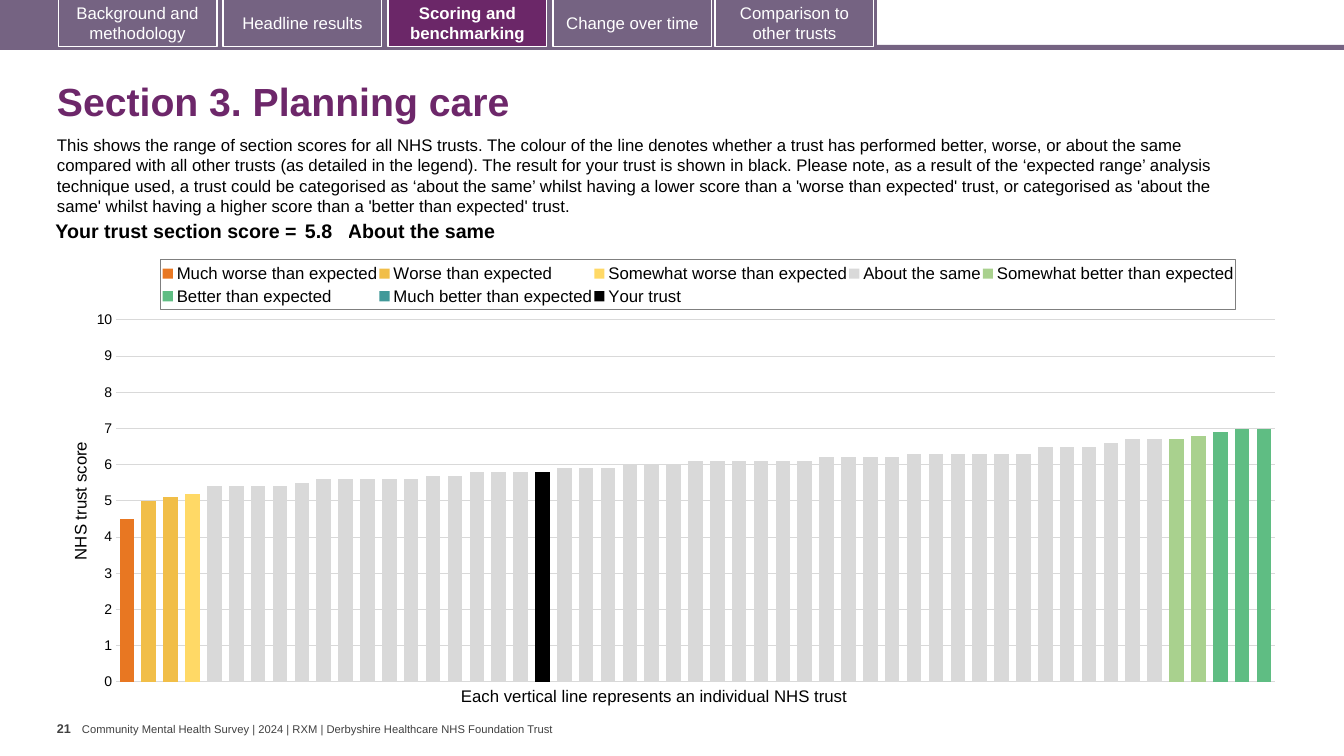
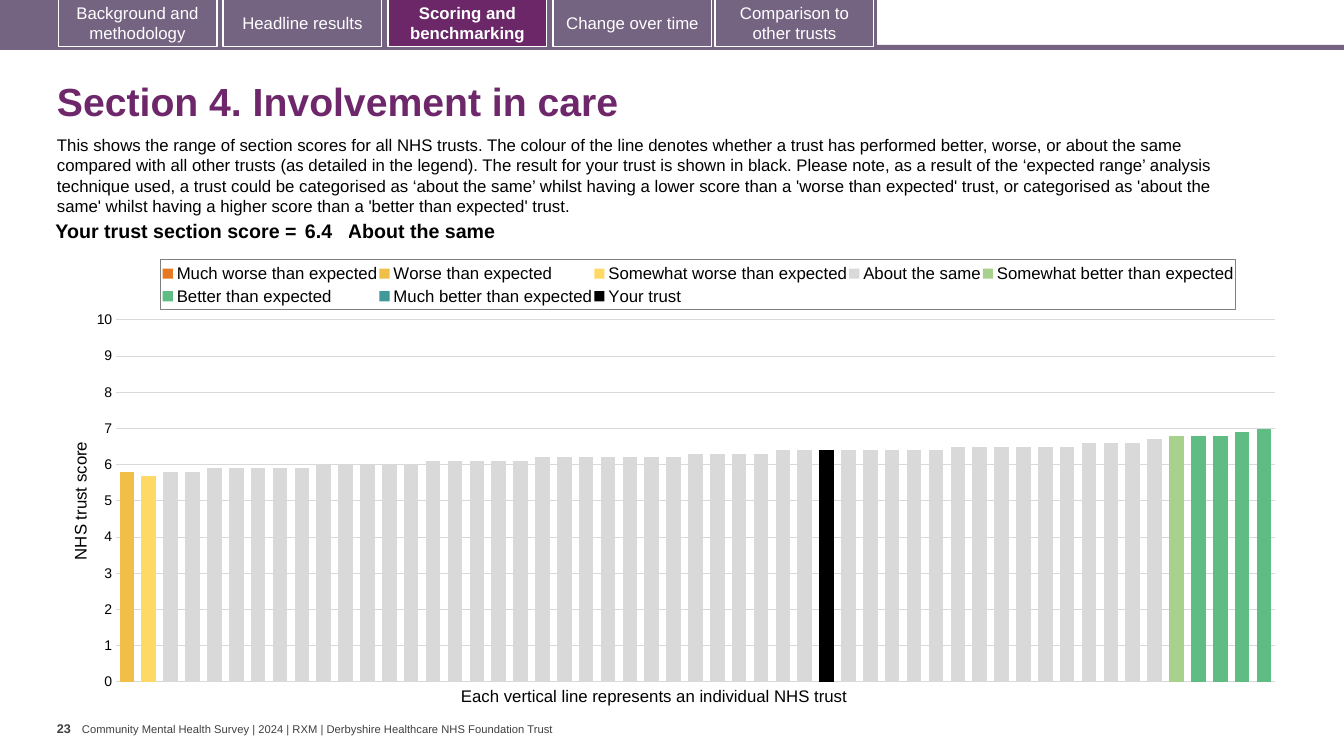
"""Build the section score slides of a mental health survey benchmark report."""
from copy import deepcopy
from dataclasses import dataclass
from typing import NamedTuple

from pptx import Presentation
from pptx.chart.data import CategoryChartData
from pptx.dml.color import RGBColor
from pptx.enum.chart import XL_CHART_TYPE as ChartType, XL_LEGEND_POSITION as LegendPosition
from pptx.enum.chart import XL_TICK_MARK as TickMark
from pptx.enum.shapes import MSO_SHAPE as Preset
from pptx.enum.text import MSO_ANCHOR as Anchor, PP_ALIGN as Align
from pptx.oxml import parse_xml
from pptx.oxml.ns import nsdecls, qn
from pptx.util import Emu, Pt

SLIDE_WIDTH, SLIDE_HEIGHT = 1344, 756
EMU_PER_PX = 12192000 / SLIDE_WIDTH


@dataclass(frozen=True)
class Theme:
    """Colours, font and type sizes of the report."""
    font: str = "Arial"
    band: str = "756382"
    active: str = "6B2768"
    heading: str = "6D276A"
    ink: str = "000000"
    paper: str = "FFFFFF"
    muted: str = "404040"
    grid: str = "D9D9D9"
    frame: str = "7F7F7F"
    title_size: int = 28
    score_size: int = 14
    body_size: int = 12
    tick_size: int = 10
    page_size: int = 9
    footer_size: int = 8


THEME = Theme()


class Box(NamedTuple):
    """Place and size in px."""
    left: int
    top: int
    width: int
    height: int

    def emu(self) -> tuple[Emu, ...]:
        """Return the four lengths in EMU."""
        return tuple(px(length) for length in self)


class Style(NamedTuple):
    """Type style of a paragraph."""
    size: int
    color: str
    bold: bool = False


class Insets(NamedTuple):
    """Inner margins in px."""
    left: int
    top: int
    right: int
    bottom: int


class Tab(NamedTuple):
    """Navigation tab at the top of a slide."""
    left: int
    label: str


class Band(NamedTuple):
    """Legend entry with its colour."""
    name: str
    color: str


class Run(NamedTuple):
    """Score shared by a number of neighbouring trusts."""
    score: float
    count: int = 1


class Section(NamedTuple):
    """Title, page and scores of one survey section."""
    title: str
    page: int
    trust_rank: int
    trust_score: float
    verdict: str
    runs: tuple[tuple[Run, ...], ...]


DEFAULT_INSETS = Insets(10, 5, 10, 5)
CHART = Box(67, 249, 1225, 448)
PLOT = Box(49, 71, 1159, 362)
LEGEND = Box(94, 11, 1075, 50)
TABS = (
    Tab(58, "Background and methodology"),
    Tab(223, "Headline results"),
    Tab(388, "Scoring and benchmarking"),
    Tab(553, "Change over time"),
    Tab(715, "Comparison to other trusts"),
)
ACTIVE_TAB = TABS[2]
BANDS = (
    Band("Much worse than expected", "E87722"),
    Band("Worse than expected", "F1BE48"),
    Band("Somewhat worse than expected", "FFD966"),
    Band("About the same", "D9D9D9"),
    Band("Somewhat better than expected", "A9D18E"),
    Band("Better than expected", "5FBD83"),
    Band("Much better than expected", "419999"),
)
YOUR_TRUST = Band("Your trust", THEME.ink)
TRUST_COUNT = 53
FOOTER = "Community Mental Health Survey | 2024 | RXM | Derbyshire Healthcare NHS Foundation Trust"
INTRO = (
    "This shows the range of section scores for all NHS trusts. The colour of the line denotes "
    "whether a trust has performed better, worse, or about the same compared with all other trusts "
    "(as detailed in the legend). The result for your trust is shown in black. Please note, as a "
    "result of the ‘expected range’ analysis technique used, a trust could be categorised as "
    "‘about the same’ whilst having a lower score than a 'worse than expected' trust, or "
    "categorised as 'about the same' whilst having a higher score than a 'better than expected' trust."
)
SECTIONS = (
    Section("Section 3. Planning care", 21, 20, 5.8, "About the same", (
        (Run(4.5),), (Run(5), Run(5.1)), (Run(5.2),),
        (Run(5.4, 4), Run(5.5), Run(5.6, 5), Run(5.7, 2), Run(5.8, 4), Run(5.9, 3), Run(6, 3),
         Run(6.1, 6), Run(6.2, 4), Run(6.3, 6), Run(6.5, 3), Run(6.6), Run(6.7, 2)),
        (Run(6.7), Run(6.8)), (Run(6.9), Run(7, 2)), (),
    )),
    Section("Section 4. Involvement in care", 23, 33, 6.4, "About the same", (
        (), (Run(5.8),), (Run(5.7),),
        (Run(5.8, 2), Run(5.9, 5), Run(6, 5), Run(6.1, 5), Run(6.2, 7), Run(6.3, 4),
         Run(6.4, 8), Run(6.5, 6), Run(6.6, 3), Run(6.7)),
        (Run(6.8),), (Run(6.8, 2), Run(6.9), Run(7)), (),
    )),
)


def px(length: int) -> Emu:
    """Turn px into EMU."""
    return Emu(round(length * EMU_PER_PX))


def rgb(color: str) -> RGBColor:
    """Turn a hex colour into an RGB colour."""
    return RGBColor.from_string(color)


def set_font(font, style: Style) -> None:
    """Apply a type style to a font."""
    font.name, font.size, font.bold = THEME.font, Pt(style.size), style.bold
    font.color.rgb = rgb(style.color)


def set_margins(holder, insets: Insets) -> None:
    """Set the inner margins of a text frame or table cell."""
    holder.margin_left, holder.margin_top, holder.margin_right, holder.margin_bottom = map(px, insets)


def write(frame, text: str, style: Style, align: Align = Align.LEFT):
    """Write one styled paragraph and return it."""
    paragraph = frame.paragraphs[0]
    paragraph.text, paragraph.alignment = text, align
    set_font(paragraph.font, style)
    return paragraph


def add_text(slide, box: Box, text: str, style: Style, insets: Insets = DEFAULT_INSETS,
             anchor: Anchor = Anchor.TOP):
    """Add a wrapped text box and return its paragraph."""
    frame = slide.shapes.add_textbox(*box.emu()).text_frame
    frame.word_wrap, frame.vertical_anchor = True, anchor
    set_margins(frame, insets)
    return write(frame, text, style)


def add_block(slide, box: Box, fill: str):
    """Add a plain filled rectangle."""
    block = slide.shapes.add_shape(Preset.RECTANGLE, *box.emu())
    block.shadow.inherit = False
    block.fill.solid()
    block.fill.fore_color.rgb = rgb(fill)
    block.line.fill.background()
    return block


def add_navigation(slide) -> None:
    """Draw the top band with its tabs."""
    add_block(slide, Box(0, 45, SLIDE_WIDTH, 5), THEME.band)
    add_block(slide, Box(0, 0, 877, 47), THEME.band)
    for tab in TABS:
        active = tab == ACTIVE_TAB
        button = add_block(slide, Box(tab.left, -1, 159, 48), THEME.active if active else THEME.band)
        button.line.color.rgb, button.line.width = rgb(THEME.paper), Pt(0.75)
        button.text_frame.word_wrap = True
        button.text_frame.vertical_anchor = Anchor.MIDDLE
        write(button.text_frame, tab.label, Style(THEME.body_size, THEME.paper, active), Align.CENTER)


def add_footer(slide, page: int) -> None:
    """Draw the page number and survey line."""
    add_text(slide, Box(82, 723, 477, 13), FOOTER, Style(THEME.footer_size, THEME.muted),
             Insets(0, 0, 0, 0), Anchor.MIDDLE)
    add_text(slide, Box(57, 716, 25, 40), str(page), Style(THEME.page_size, THEME.muted, True),
             Insets(0, 5, 0, 5))


def add_score(slide, section: Section) -> None:
    """Add the one-row table with the score of the trust."""
    widths = (265, 47, 866)
    table = slide.shapes.add_table(1, len(widths), *Box(36, 217, sum(widths), 31).emu()).table
    table.first_row = table.horz_banding = False
    texts = ("Your trust section score =", str(section.trust_score), section.verdict)
    aligns = (Align.RIGHT, Align.LEFT, Align.LEFT)
    sides = (4, 4, 0)
    for column, (width, text, align, side) in enumerate(zip(widths, texts, aligns, sides)):
        table.columns[column].width = px(width)
        cell = table.cell(0, column)
        cell.fill.background()
        set_margins(cell, Insets(side, 4, side, 4))
        write(cell.text_frame, text, Style(THEME.score_size, THEME.ink, True), align)


def score_data(section: Section) -> CategoryChartData:
    """Spread the band scores over the ranked trusts."""
    data = CategoryChartData()
    data.categories = [str(rank) for rank in range(1, TRUST_COUNT + 1)]
    start = 0
    for band, runs in zip(BANDS, section.runs):
        scores = [run.score for run in runs for _ in range(run.count)]
        end = start + len(scores)
        data.add_series(band.name, [None] * start + scores + [None] * (TRUST_COUNT - end))
        start = end
    before = section.trust_rank - 1
    data.add_series(YOUR_TRUST.name,
                    [None] * before + [section.trust_score] + [None] * (TRUST_COUNT - before - 1))
    return data


def place(part, index: int, target: str, box: Box) -> None:
    """Fix the place of a chart part inside the chart."""
    for layout in part.findall(qn("c:layout")):
        part.remove(layout)
    modes = '<c:xMode val="edge"/><c:yMode val="edge"/>'
    sizes = "".join(f'<c:{key} val="{length / whole}"/>'
                    for key, length, whole in zip("xywh", box, CHART[2:] * 2))
    part.insert(index, parse_xml(
        f'<c:layout {nsdecls("c")}><c:manualLayout>{target}{modes}{sizes}</c:manualLayout></c:layout>'))


def move_trust_to_right_axis(area) -> None:
    """Draw the last series on a second, unlabelled value axis."""
    bars, ranks, scale = (area.find(qn(f"c:{tag}")) for tag in ("barChart", "catAx", "valAx"))
    trust_bars, trust_ranks, trust_scale = map(deepcopy, (bars, ranks, scale))
    bars.remove(bars.findall(qn("c:ser"))[-1])
    for series in trust_bars.findall(qn("c:ser"))[:-1]:
        trust_bars.remove(series)
    for tag in ("c:majorGridlines", "c:title"):
        trust_scale.remove(trust_scale.find(qn(tag)))
    for tag, value in (("axPos", "r"), ("tickLblPos", "none"), ("crosses", "max")):
        trust_scale.find(qn(f"c:{tag}")).set("val", value)
    bars.addnext(trust_bars)
    scale.addnext(trust_scale)
    trust_scale.addnext(trust_ranks)
    rank_id, scale_id = "5001", "5002"
    for reference, value in zip(trust_bars.findall(qn("c:axId")), (rank_id, scale_id)):
        reference.set("val", value)
    for axis, own, other in ((trust_ranks, rank_id, scale_id), (trust_scale, scale_id, rank_id)):
        axis.find(qn("c:axId")).set("val", own)
        axis.find(qn("c:crossAx")).set("val", other)


def add_score_chart(slide, section: Section) -> None:
    """Add the column chart of all trust scores."""
    body, small = Style(THEME.body_size, THEME.ink), Style(THEME.tick_size, THEME.ink)
    chart = slide.shapes.add_chart(ChartType.COLUMN_CLUSTERED, *CHART.emu(), score_data(section)).chart
    set_font(chart.font, small)
    chart.has_title = False
    plot = chart.plots[0]
    plot.gap_width, plot.overlap, plot.vary_by_categories = 50, 100, False
    for series, band in zip(plot.series, (*BANDS, YOUR_TRUST)):
        series.format.fill.solid()
        series.format.fill.fore_color.rgb = rgb(band.color)

    chart.category_axis.visible = False
    scale = chart.value_axis
    scale.minimum_scale, scale.maximum_scale, scale.major_unit = 0, 10, 1
    scale.major_tick_mark = scale.minor_tick_mark = TickMark.NONE
    scale.format.line.fill.background()
    scale.major_gridlines.format.line.color.rgb = rgb(THEME.grid)
    scale.major_gridlines.format.line.width = Pt(0.75)
    set_font(scale.tick_labels.font, small)
    write(scale.axis_title.text_frame, "NHS trust score", body, Align.CENTER)

    chart.has_legend = True
    legend = chart.legend
    legend.position, legend.include_in_layout = LegendPosition.TOP, False
    set_font(legend.font, body)
    key = legend._element
    place(key, 1, "", LEGEND)
    key.find(qn("c:overlay")).addnext(parse_xml(
        f'<c:spPr {nsdecls("c", "a")}><a:ln w="9525"><a:solidFill>'
        f'<a:srgbClr val="{THEME.frame}"/></a:solidFill></a:ln></c:spPr>'))
    area = chart._chartSpace.chart.plotArea
    place(area, 0, '<c:layoutTarget val="inner"/>', PLOT)
    move_trust_to_right_axis(area)


def add_section(deck, section: Section) -> None:
    """Add the slide of one section."""
    slide = deck.slides.add_slide(deck.slide_layouts[6])
    body = Style(THEME.body_size, THEME.ink)
    add_navigation(slide)
    title = add_text(slide, Box(47, 67, 1259, 73), section.title,
                     Style(THEME.title_size, THEME.heading, True), anchor=Anchor.MIDDLE)
    title.line_spacing = 0.9
    add_footer(slide, section.page)
    add_text(slide, Box(47, 130, 1223, 92), INTRO, body)
    add_text(slide, Box(451, 681, 414, 30), "Each vertical line represents an individual NHS trust", body)
    add_score_chart(slide, section)
    add_score(slide, section)


def main() -> None:
    """Build and save the deck."""
    deck = Presentation()
    deck.slide_width, deck.slide_height = px(SLIDE_WIDTH), px(SLIDE_HEIGHT)
    for section in SECTIONS:
        add_section(deck, section)
    deck.save("out.pptx")


if __name__ == "__main__":
    main()
